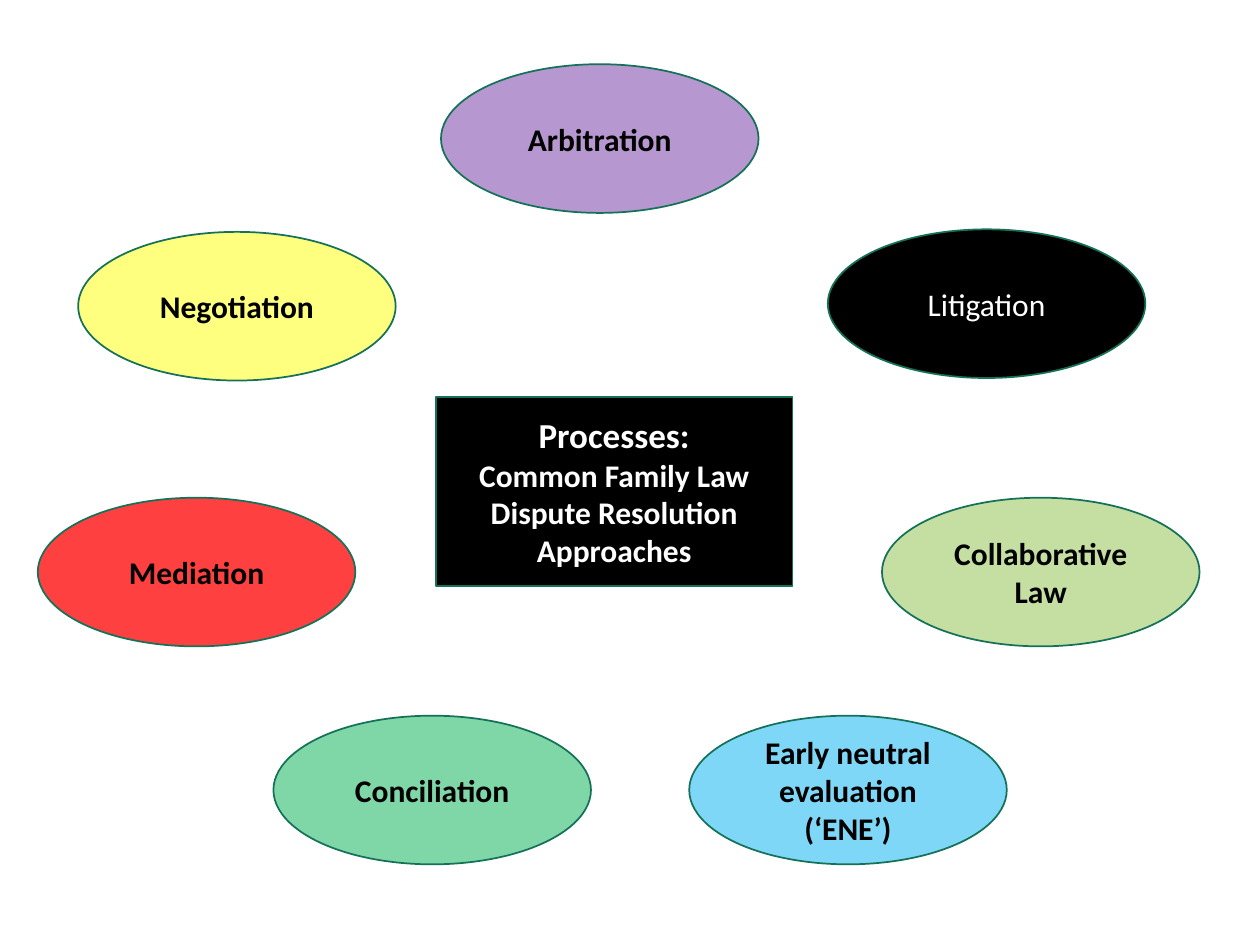
from dataclasses import dataclass

from pptx import Presentation
from pptx.dml.color import RGBColor
from pptx.enum.shapes import MSO_SHAPE
from pptx.enum.text import MSO_ANCHOR, PP_ALIGN
from pptx.oxml.ns import qn
from pptx.util import Inches, Pt
from lxml import etree

OVAL, RECT = MSO_SHAPE.OVAL, MSO_SHAPE.RECTANGLE
MIDDLE, CENTER = MSO_ANCHOR.MIDDLE, PP_ALIGN.CENTER


@dataclass(frozen=True)
class Theme:
    font: str = "Calibri"
    head: int = 20
    body: int = 18
    edge: str = "157259"
    dark: str = "000000"
    light: str = "FFFFFF"
    green: str = "8BC145"
    jade: str = "00B050"
    blue: str = "00B0F0"
    yellow: str = "FFFF00"
    purple: str = "7030A0"
    red: str = "FF0000"


THEME = Theme()
OVAL_W, OVAL_H = 2.52, 1.18

# label, left, top, fill, opacity in percent
OVALS = [
    ("Collaborative Law", 7, 3.95, THEME.green, 50),
    ("Conciliation", 2.17, 5.68, THEME.jade, 50),
    ("Early neutral evaluation (‘ENE’)", 5.47, 5.68, THEME.blue, 50),
    ("Litigation", 6.57, 1.82, THEME.dark, 100),
    ("Negotiation", 0.62, 1.84, THEME.yellow, 50),
    ("Arbitration", 3.5, 0.51, THEME.purple, 50),
    ("Mediation", 0.3, 3.95, THEME.red, 75),
]
TITLE = [
    ("Processes:", THEME.head),
    ("Common Family Law Dispute Resolution Approaches", THEME.body),
]


def add_node(slide, kind, box, fill, lines, alpha=100, bold=True):
    """Place a filled shape with centred lines of (text, size)."""
    node = slide.shapes.add_shape(kind, *map(Inches, box))
    node.shadow.inherit = False
    node.fill.solid()
    node.fill.fore_color.rgb = RGBColor.from_string(fill)
    if alpha < 100:
        tint = node.fill._xPr.find(qn("a:solidFill"))[0]
        etree.SubElement(tint, qn("a:alpha"), val=str(alpha * 1000))
    node.line.color.rgb = RGBColor.from_string(THEME.edge)
    node.line.width = Pt(1)

    frame = node.text_frame
    frame.word_wrap = True
    frame.vertical_anchor = MIDDLE
    ink = THEME.light if fill == THEME.dark else THEME.dark
    for i, (text, size) in enumerate(lines):
        para = frame.add_paragraph() if i else frame.paragraphs[0]
        para.alignment = CENTER
        run = para.add_run()
        run.text = text
        style = {"name": THEME.font, "size": Pt(size), "bold": bold}
        for key, value in style.items():
            setattr(run.font, key, value)
        run.font.color.rgb = RGBColor.from_string(ink)


def add_ring(slide, left, top):
    """Ovals for the approaches, around the centre."""
    for label, x, y, fill, alpha in OVALS:
        box = (left + x, top + y, OVAL_W, OVAL_H)
        add_node(slide, OVAL, box, fill, [(label, THEME.body)], alpha,
                 bold=fill != THEME.dark)


def add_hub(slide, box):
    """Title box in the centre."""
    add_node(slide, RECT, box, THEME.dark, TITLE)


def main():
    deck = Presentation()
    deck.slide_width, deck.slide_height = Inches(10), Inches(7.5)
    slide = deck.slides.add_slide(deck.slide_layouts[6])
    add_ring(slide, 0, 0)
    add_hub(slide, (3.46, 3.15, 2.83, 1.5))
    deck.save("out.pptx")


if __name__ == "__main__":
    main()
